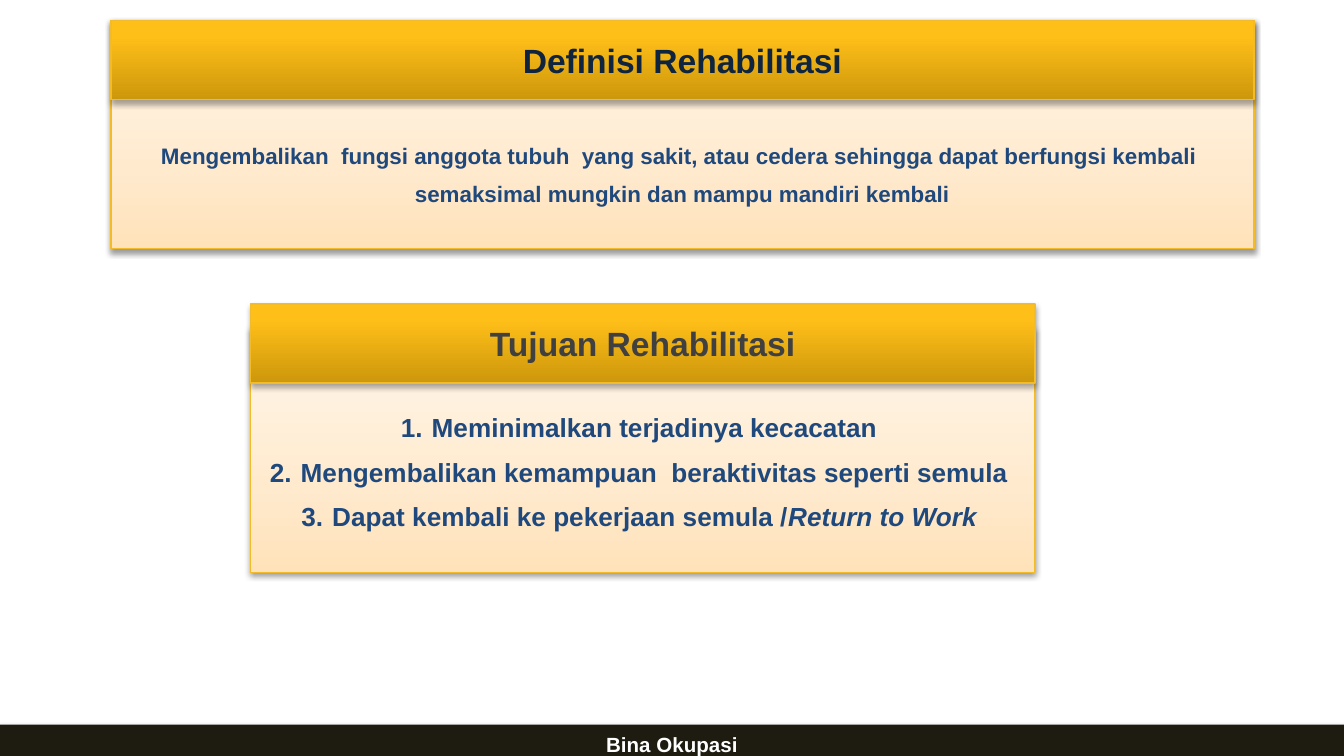
from dataclasses import dataclass
from typing import NamedTuple

from pptx import Presentation
from pptx.dml.color import RGBColor
from pptx.enum.shapes import MSO_SHAPE
from pptx.enum.text import MSO_ANCHOR, PP_ALIGN
from pptx.oxml import parse_xml
from pptx.oxml.ns import nsdecls, qn
from pptx.util import Inches, Pt

SLIDE_WIDTH = Inches(10)
SLIDE_HEIGHT = SLIDE_WIDTH * 9 // 16


@dataclass(frozen=True)
class Theme:
    font: str = "Arial"
    border: str = "F3BB27"
    body_ink: str = "1F497D"
    title_ink: str = "0F243E"
    muted_ink: str = "404040"
    footer: str = "1E1C11"
    footer_ink: str = "FFFFFF"
    cream: tuple = ((0, "FFE2B9"), (35, "FFEACE"), (100, "FFF7EC"))
    gold: tuple = ((0, "CC970B"), (80, "FFBF19"), (100, "FFC01A"))
    title_size: float = 18
    goal_size: float = 14
    definition_size: float = 12
    footer_size: float = 11


THEME = Theme()


class Area(NamedTuple):
    """Percent shares of the slide."""
    left: float
    top: float
    width: float
    height: float


class TextStyle(NamedTuple):
    size: float
    ink: str
    numbered: bool = False


class Panel(NamedTuple):
    header: Area
    body: Area
    title: str
    title_ink: str
    lines: tuple
    style: TextStyle
    text_top: float


PANELS = (
    Panel(
        Area(8.25, 2.7, 85.05, 10.5), Area(8.25, 2.7, 85.05, 30.2),
        "Definisi Rehabilitasi", THEME.title_ink,
        (("Mengembalikan  fungsi anggota tubuh  yang sakit, atau cedera "
          "sehingga dapat berfungsi kembali ",),
         ("semaksimal mungkin dan mampu mandiri kembali",)),
        TextStyle(THEME.definition_size, THEME.body_ink), 0.64,
    ),
    Panel(
        Area(18.65, 40.2, 58.35, 10.5), Area(18.63, 43.24, 58.35, 32.5),
        "Tujuan Rehabilitasi", THEME.muted_ink,
        (("Meminimalkan terjadinya kecacatan",),
         ("Mengembalikan kemampuan  beraktivitas seperti semula",),
         ("Dapat kembali ke pekerjaan semula /", "Return to Work")),
        TextStyle(THEME.goal_size, THEME.body_ink, True), 0.38,
    ),
)


def add_block(slide, area: Area, shadow_alpha: int, shadow_distance: float):
    block = slide.shapes.add_shape(
        MSO_SHAPE.RECTANGLE,
        int(SLIDE_WIDTH * area.left / 100), int(SLIDE_HEIGHT * area.top / 100),
        int(SLIDE_WIDTH * area.width / 100), int(SLIDE_HEIGHT * area.height / 100))
    block.line.fill.background()
    block.shadow.inherit = False
    effects = block._element.spPr.find(qn("a:effectLst"))
    effects.append(parse_xml(
        f'<a:outerShdw {nsdecls("a")} blurRad="{Pt(3.1)}" '
        f'dist="{Pt(shadow_distance)}" dir="5400000" rotWithShape="0">'
        f'<a:srgbClr val="000000"><a:alpha val="{shadow_alpha * 1000}"/>'
        '</a:srgbClr></a:outerShdw>'))
    return block


def paint_gradient(block, stops: tuple) -> None:
    block.fill.gradient()
    block.fill.gradient_angle = 90
    stop_list = block._element.spPr.find(qn("a:gradFill")).find(qn("a:gsLst"))
    for stop in list(stop_list):
        stop_list.remove(stop)
    for position, color in stops:
        stop_list.append(parse_xml(
            f'<a:gs {nsdecls("a")} pos="{position * 1000}">'
            f'<a:srgbClr val="{color}"/></a:gs>'))
    block.line.color.rgb = RGBColor.from_string(THEME.border)
    block.line.width = Pt(0.75)


def number_paragraph(paragraph) -> None:
    properties = paragraph._p.get_or_add_pPr()
    properties.set("marL", str(Inches(0.18)))
    properties.set("indent", str(-Inches(0.23)))
    properties.append(parse_xml(
        f'<a:buFont {nsdecls("a")} typeface="{THEME.font}"/>'))
    properties.append(parse_xml(
        f'<a:buAutoNum {nsdecls("a")} type="arabicPeriod"/>'))


def write_lines(block, lines: tuple, style: TextStyle, text_top: float = 0.05) -> None:
    frame = block.text_frame
    frame.word_wrap = True
    frame.vertical_anchor = MSO_ANCHOR.MIDDLE
    frame.margin_top = Inches(text_top)
    frame.text = "\n".join(line[0] for line in lines)
    for index, (paragraph, line) in enumerate(zip(frame.paragraphs, lines)):
        paragraph.alignment = PP_ALIGN.CENTER
        if index:
            paragraph.space_before = Pt(style.size / 2)
        if style.numbered:
            number_paragraph(paragraph)
        for emphasis in line[1:]:
            run = paragraph.add_run()
            run.text = emphasis
            run.font.italic = True
        for run in paragraph.runs:
            run.font.name = THEME.font
            run.font.size = Pt(style.size)
            run.font.bold = True
            run.font.color.rgb = RGBColor.from_string(style.ink)


def draw_panel(slide, panel: Panel) -> None:
    body = add_block(slide, panel.body, 38, 1.6)
    paint_gradient(body, THEME.cream)
    write_lines(body, panel.lines, panel.style, panel.text_top)
    header = add_block(slide, panel.header, 35, 1.8)
    paint_gradient(header, THEME.gold)
    write_lines(header, ((panel.title,),), TextStyle(THEME.title_size, panel.title_ink))


def draw_footer(slide) -> None:
    footer = add_block(slide, Area(-0.2, 95.85, 100.4, 5.16), 35, 1.8)
    footer.fill.solid()
    footer.fill.fore_color.rgb = RGBColor.from_string(THEME.footer)
    write_lines(footer, (("Bina Okupasi",),),
                TextStyle(THEME.footer_size, THEME.footer_ink))


def main() -> None:
    deck = Presentation()
    deck.slide_width, deck.slide_height = SLIDE_WIDTH, SLIDE_HEIGHT
    slide = deck.slides.add_slide(deck.slide_layouts[6])
    for panel in PANELS:
        draw_panel(slide, panel)
    draw_footer(slide)
    deck.save("out.pptx")


if __name__ == "__main__":
    main()
